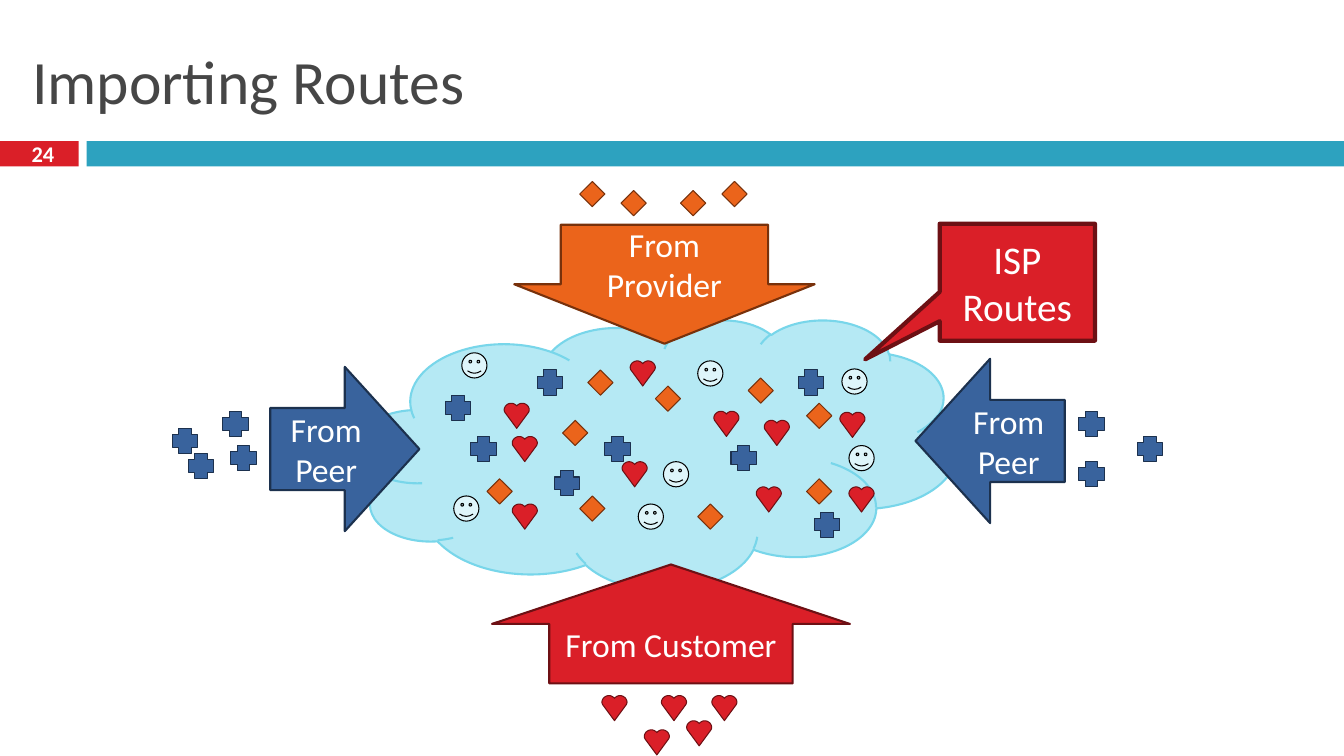
from pptx import Presentation
from pptx.dml.color import RGBColor
from pptx.enum import shapes, text
from pptx.util import Inches, Pt

PRESET = shapes.MSO_SHAPE
FONT = "Calibri"
TOKEN_SIZE = 0.25
COLORS = {
    "white": "FFFFFF",
    "title": "464646",
    "bar": "2DA2BF",
    "cloud": "B5E9F4",
    "cloud_edge": "78D6EA",
    "provider": "EB641B",
    "provider_edge": "78310B",
    "peer": "39639D",
    "peer_edge": "1C314E",
    "customer": "DA1F28",
    "customer_edge": "6D1014",
    "own": "DEF5FA",
    "own_edge": "000000",
}
PROVIDER_ROUTES = [
    (8, 4), (5.75, 4.92), (8, 4.75), (5.83, 3.67), (7.42, 3.75), (6.92, 5),
    (6.5, 3.83), (4.83, 4.75), (5.58, 4.17),
    (6.75, 1.89), (5.75, 1.8), (7.16, 1.8), (6.16, 1.89),
]
PEER_ROUTES = [
    (4.42, 3.92), (6, 4.33), (8.08, 5.08), (7.92, 3.67), (4.67, 4.33),
    (5.5, 4.67), (7.25, 4.42), (5.33, 3.67),
    (10.7, 4.58), (1.87, 4.5), (2.29, 4.42), (1.71, 4.25), (2.21, 4.08),
    (10.7, 4.08), (11.28, 4.33),
]
OWN_ROUTES = [
    (6.33, 5), (6.92, 3.58), (4.5, 4.92), (4.58, 3.5), (8.42, 4.42),
    (6.58, 4.58), (8.35, 3.66),
]
CUSTOMER_ROUTES = [
    (8.42, 4.83), (7.5, 4.83), (5.08, 5), (5.08, 4.33), (5, 4), (6.17, 4.58),
    (7.08, 4.08), (6.25, 3.58), (8.33, 4.09), (7.58, 4.17),
    (6.39, 7.24), (6.81, 7.15), (5.97, 6.9), (7.06, 6.9), (6.56, 6.9),
]
HEART_TOP = (125, 28)
HEART_TIP = (125, 250)
HEART_CURVES = [
    ((118, 20), (111, 13), (102, 9)),
    ((90, 3), (77, 0), (64, 1)),
    ((50, 3), (37, 8), (26, 17)),
    ((15, 26), (7, 37), (3, 50)),
    ((0, 64), (0, 77), (7, 90)),
]


def color(name):
    return RGBColor.from_string(COLORS[name])


def paint(shape, fill, edge=None, width=0.75):
    shape.shadow.inherit = False
    shape.fill.solid()
    shape.fill.fore_color.rgb = color(fill)
    if edge:
        shape.line.color.rgb = color(edge)
        shape.line.width = Pt(width)
    else:
        shape.line.fill.background()


def write(shape, words, size, ink="white", align=text.PP_ALIGN.CENTER, bold=False):
    frame = shape.text_frame
    frame.word_wrap = True
    frame.vertical_anchor = text.MSO_ANCHOR.MIDDLE
    paragraph = frame.paragraphs[0]
    paragraph.text = words
    paragraph.alignment = align
    paragraph.font.name = FONT
    paragraph.font.size = Pt(size)
    paragraph.font.bold = bold
    paragraph.font.color.rgb = color(ink)


def add_preset(slide, preset, box, fill, edge=None, width=0.75, adjustments=()):
    shape = slide.shapes.add_shape(preset, *map(Inches, box))
    for index, value in enumerate(adjustments):
        shape.adjustments[index] = value
    paint(shape, fill, edge, width)
    return shape


def add_label(slide, box, words, size, **style):
    write(slide.shapes.add_textbox(*map(Inches, box)), words, size, **style)


def add_source(slide, preset, box, group, words, adjustments=(), width=1.5, size=24):
    shape = add_preset(slide, preset, box, group, group + "_edge", width, adjustments)
    write(shape, words, size)


def add_routes(slide, preset, group, places):
    for left, top in places:
        box = (left, top, TOKEN_SIZE, TOKEN_SIZE)
        add_preset(slide, preset, box, group, group + "_edge")


def bezier(start, first, second, end, t):
    weights = ((1 - t) ** 3, 3 * t * (1 - t) ** 2, 3 * t * t * (1 - t), t ** 3)
    corners = (start, first, second, end)
    return tuple(sum(w * c[axis] for w, c in zip(weights, corners)) for axis in (0, 1))


def heart_outline(steps=4):
    left_half = [HEART_TOP]
    for first, second, end in HEART_CURVES:
        start = left_half[-1]
        left_half += [bezier(start, first, second, end, i / steps)
                      for i in range(1, steps + 1)]
    right_half = [(2 * HEART_TOP[0] - x, y) for x, y in reversed(left_half[1:])]
    return left_half + [HEART_TIP] + right_half


def add_hearts(slide, group, places):
    outline = heart_outline()
    for left, top in places:
        builder = slide.shapes.build_freeform(*outline[0], scale=Inches(1) / 1000)
        builder.add_line_segments(outline[1:], close=True)
        heart = builder.convert_to_shape(Inches(left), Inches(top))
        paint(heart, group, group + "_edge")


def main():
    deck = Presentation()
    deck.slide_width, deck.slide_height = Inches(13.33), Inches(7.5)
    slide = deck.slides.add_slide(deck.slide_layouts[6])

    add_preset(slide, PRESET.RECTANGLE, (0, 1.4, 0.78, 0.25), "customer")
    add_preset(slide, PRESET.RECTANGLE, (0.86, 1.4, 12.47, 0.25), "bar")
    add_label(slide, (-0.01, 1.38, 0.87, 0.29), "24", 16, bold=True)
    add_label(slide, (0.22, 0.25, 12.89, 1.08), "Importing Routes", 44,
              ink="title", align=text.PP_ALIGN.LEFT)

    add_preset(slide, PRESET.CLOUD, (3.54, 3.17, 5.95, 2.68), "cloud", "cloud_edge", 1.5)
    add_routes(slide, PRESET.DIAMOND, "provider", PROVIDER_ROUTES)
    add_routes(slide, PRESET.CROSS, "peer", PEER_ROUTES)
    add_routes(slide, PRESET.SMILEY_FACE, "own", OWN_ROUTES)
    add_hearts(slide, "customer", CUSTOMER_ROUTES)

    add_source(slide, PRESET.DOWN_ARROW, (5.1, 2.23, 2.98, 1.18), "provider",
               "From Provider", (0.69, 0.5))
    add_source(slide, PRESET.LEFT_ARROW, (9.08, 3.56, 1.48, 1.63), "peer", "From Peer")
    add_source(slide, PRESET.RIGHT_ARROW, (2.68, 3.64, 1.48, 1.63), "peer", "From Peer")
    add_source(slide, PRESET.UP_ARROW, (4.88, 5.6, 3.55, 1.18), "customer",
               "From Customer", (0.68, 0.5))
    add_source(slide, PRESET.RECTANGULAR_CALLOUT, (9.32, 2.22, 1.54, 1.16), "customer",
               "ISP Routes", (-0.98, 0.66), width=3, size=28)

    deck.save("out.pptx")


if __name__ == "__main__":
    main()
